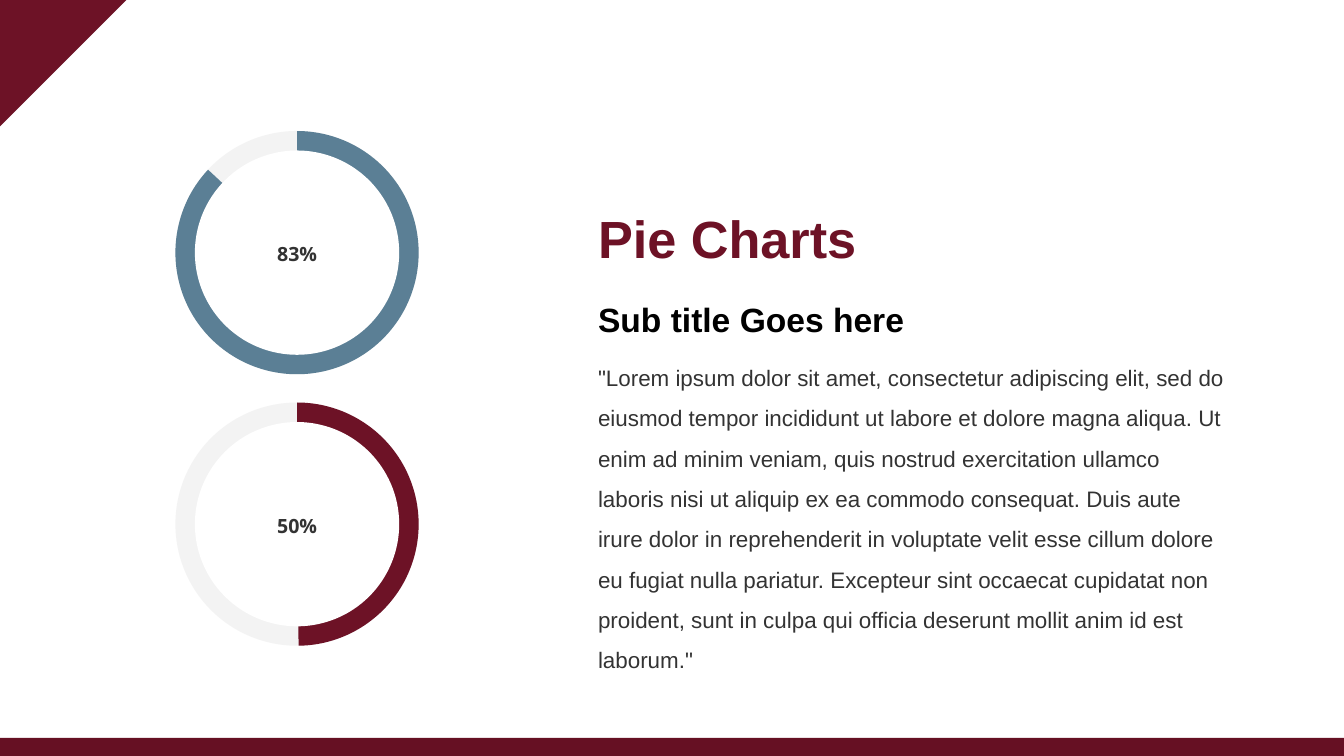
import pptx
import pptx.util
from lxml import etree
from pptx.dml.color import RGBColor
from pptx.enum.shapes import MSO_SHAPE
from pptx.enum.text import MSO_ANCHOR, MSO_AUTO_SIZE, PP_ALIGN
from pptx.oxml.ns import qn
from pptx.util import Inches, Pt

MAROON = RGBColor(0x6D, 0x12, 0x26)
DARK_MAROON = RGBColor(0x66, 0x10, 0x23)
BLUE = RGBColor(0x5B, 0x7F, 0x95)
TRACK = RGBColor(0xF2, 0xF2, 0xF2)
WHITE = RGBColor(0xFF, 0xFF, 0xFF)
BLACK = RGBColor(0, 0, 0)
GRAY = RGBColor(0x33, 0x33, 0x33)

TITLE = "Pie Charts"
SUBTITLE = "Sub title Goes here"
BODY = (
    '"Lorem ipsum dolor sit amet, consectetur adipiscing elit, sed do eiusmod '
    "tempor incididunt ut labore et dolore magna aliqua. Ut enim ad minim veniam, "
    "quis nostrud exercitation ullamco laboris nisi ut aliquip ex ea commodo "
    "consequat. Duis aute irure dolor in reprehenderit in voluptate velit esse "
    "cillum dolore eu fugiat nulla pariatur. Excepteur sint occaecat cupidatat non "
    'proident, sunt in culpa qui officia deserunt mollit anim id est laborum."'
)
# label, colour, sweep in degrees clockwise from the top
RINGS = [("83%", BLUE, 313), ("50%", MAROON, 179.25)]

RING_X, RING_Y, RING_PITCH = 2.21, 1.88, 2.02  # centre of first ring, step down
RING_SIZE, HOLE_SIZE = 1.81, 1.52
LABEL_W, LABEL_H = 0.59, 0.22
TEXT_X = 4.45


def add_filled(shapes, kind, x, y, w, h, color):
    sp = shapes.add_shape(kind, Inches(x), Inches(y), Inches(w), Inches(h))
    sp.shadow.inherit = False
    sp.fill.solid()
    sp.fill.fore_color.rgb = color
    sp.line.fill.background()
    return sp


def set_text(sp, text, size, color, bold=True, font="Arial",
             align=PP_ALIGN.LEFT, anchor=MSO_ANCHOR.TOP, spacing=None):
    tf = sp.text_frame
    tf.word_wrap = True
    tf.auto_size = MSO_AUTO_SIZE.SHAPE_TO_FIT_TEXT
    tf.vertical_anchor = anchor
    tf.margin_left = tf.margin_right = tf.margin_top = tf.margin_bottom = 0
    tf.text = text
    p = tf.paragraphs[0]
    p.alignment = align
    p.line_spacing = spacing
    p.font.name = font
    p.font.size = Pt(size)
    p.font.bold = bold
    p.font.color.rgb = color


def add_ring(s, cx, cy, label, color, sweep):
    """Group a pale track, a pie for the value, a white hole and a label."""
    shapes = s.shapes.add_group_shape().shapes

    def centred(kind, size, fill):
        return add_filled(shapes, kind, cx - size / 2, cy - size / 2, size, size, fill)

    track = centred(MSO_SHAPE.OVAL, RING_SIZE, TRACK)
    rgb = track.fill._xPr.find(".//" + qn("a:srgbClr"))
    etree.SubElement(rgb, qn("a:alpha"), val="90000")

    pie = centred(MSO_SHAPE.PIE, RING_SIZE, color)
    # pie angles run clockwise from the right, 0.6 adjustment units per degree
    pie.adjustments[0] = 270 * 0.6
    pie.adjustments[1] = (270 + sweep) % 360 * 0.6

    centred(MSO_SHAPE.OVAL, HOLE_SIZE, WHITE)
    box = shapes.add_textbox(Inches(cx - LABEL_W / 2), Inches(cy + 0.01 - LABEL_H / 2),
                             Inches(LABEL_W), Inches(LABEL_H))
    set_text(box, label, 10.5, GRAY, font="Open Sans",
             align=PP_ALIGN.CENTER, anchor=MSO_ANCHOR.MIDDLE)


prs = pptx.Presentation()
prs.slide_width = Inches(10)
prs.slide_height = prs.slide_width * 9 // 16
s = prs.slides.add_slide(prs.slide_layouts[5])

add_filled(s.shapes, MSO_SHAPE.RECTANGLE, 0, 5.49, 10, 0.14, DARK_MAROON)
corner = add_filled(s.shapes, MSO_SHAPE.RIGHT_TRIANGLE, 0, 0, 0.94, 0.94, MAROON)
corner.rotation = 90

for i, ring in enumerate(RINGS):
    add_ring(s, RING_X, RING_Y + i * RING_PITCH, *ring)

title = s.shapes.title
title.left, title.top = Inches(TEXT_X), Inches(1.53)
title.width, title.height = Inches(3.11), Inches(0.47)
set_text(title, TITLE, 28, MAROON, anchor=MSO_ANCHOR.MIDDLE)

subtitle = s.shapes.add_textbox(Inches(TEXT_X), Inches(1.93), Inches(5.29), Inches(0.51))
set_text(subtitle, SUBTITLE, 18, BLACK, spacing=Pt(43))

body = s.shapes.add_textbox(Inches(TEXT_X), Inches(2.61), Inches(4.7), Inches(2.39))
set_text(body, BODY, 12, GRAY, bold=False, spacing=1.5)

prs.save("out.pptx")
